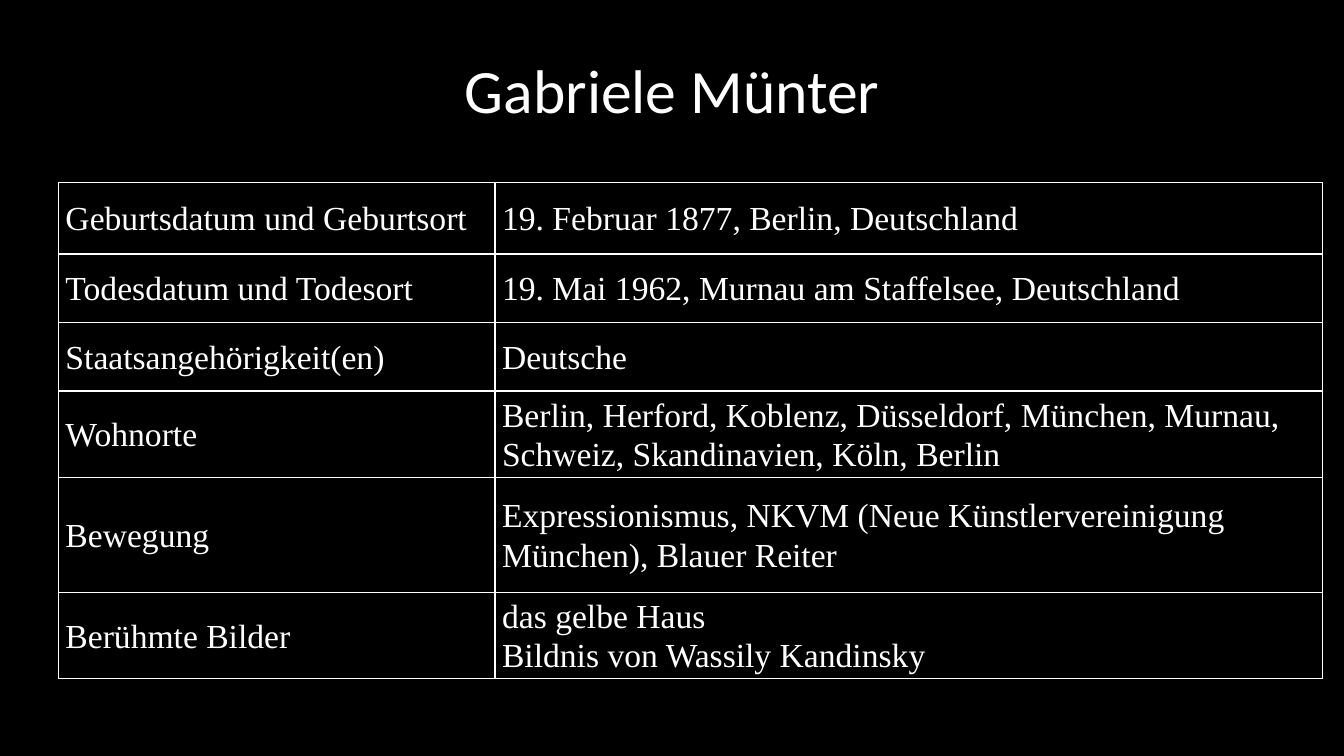
from lxml import etree
from pptx import Presentation
from pptx import util as u
from pptx.dml.color import RGBColor
from pptx.enum import text
from pptx.oxml import ns

BLACK = RGBColor(0, 0, 0)
WHITE = RGBColor(255, 255, 255)
COLUMN_WIDTHS = [4.33, 8.21]
ROW_HEIGHTS = [0.71, 0.68, 0.68, 0.83, 1.14, 0.78]
THICK_RULE = 0
FACTS = [
    ("Geburtsdatum und Geburtsort", "19. Februar 1877, Berlin, Deutschland"),
    ("Todesdatum und Todesort", "19. Mai 1962, Murnau am Staffelsee, Deutschland"),
    ("Staatsangehörigkeit(en)", "Deutsche"),
    ("Wohnorte", "Berlin, Herford, Koblenz, Düsseldorf, München, Murnau, "
                 "Schweiz, Skandinavien, Köln, Berlin"),
    ("Bewegung", "Expressionismus, NKVM (Neue Künstlervereinigung München), Blauer Reiter"),
    ("Berühmte Bilder", "das gelbe Haus\nBildnis von Wassily Kandinsky"),
]


def format_text(frame, font_name, size, spacing, alignment):
    for paragraph in frame.paragraphs:
        paragraph.alignment = alignment
        paragraph.line_spacing = spacing
        for run in paragraph.runs:
            run.font.name = font_name
            run.font.size = u.Pt(size)
            run.font.color.rgb = WHITE


def add_title(slide, left, top, width, height):
    box = slide.shapes.add_textbox(u.Inches(left), u.Inches(top), u.Inches(width), u.Inches(height))
    frame = box.text_frame
    frame.word_wrap = True
    frame.vertical_anchor = text.MSO_ANCHOR.MIDDLE
    frame.text = "Gabriele Münter"
    format_text(frame, "Calibri", 44, 0.9, text.PP_ALIGN.CENTER)


def set_borders(cell, row):
    properties = cell._tc.get_or_add_tcPr()
    widths = {"L": 1, "R": 1,
              "T": 1.5 if row == THICK_RULE + 1 else 1,
              "B": 1.5 if row == THICK_RULE else 1}
    for position, (side, width) in enumerate(widths.items()):
        line = etree.Element(ns.qn(f"a:ln{side}"), w=str(u.Pt(width)))
        fill = etree.SubElement(line, ns.qn("a:solidFill"))
        etree.SubElement(fill, ns.qn("a:srgbClr"), val=str(WHITE))
        properties.insert(position, line)


def fill_cell(cell, content, row):
    cell.fill.solid()
    cell.fill.fore_color.rgb = BLACK
    cell.margin_left = cell.margin_right = u.Inches(0.07)
    cell.margin_top = cell.margin_bottom = 0
    cell.vertical_anchor = text.MSO_ANCHOR.MIDDLE
    cell.text_frame.text = content
    format_text(cell.text_frame, "Times New Roman", 24, 1.07, text.PP_ALIGN.LEFT)
    set_borders(cell, row)


def add_facts_table(slide, left, top):
    frame = slide.shapes.add_table(
        len(FACTS), len(COLUMN_WIDTHS), u.Inches(left), u.Inches(top),
        u.Inches(sum(COLUMN_WIDTHS)), u.Inches(sum(ROW_HEIGHTS)))
    table = frame.table
    table.first_row = False
    table.horz_banding = False
    for column, width in zip(table.columns, COLUMN_WIDTHS):
        column.width = u.Inches(width)
    for row, (height, fact) in enumerate(zip(ROW_HEIGHTS, FACTS)):
        table.rows[row].height = u.Inches(height)
        for column, content in enumerate(fact):
            fill_cell(table.cell(row, column), content, row)


def main():
    presentation = Presentation()
    presentation.slide_width = u.Inches(13.33)
    presentation.slide_height = u.Inches(7.5)
    slide = presentation.slides.add_slide(presentation.slide_layouts[6])
    slide.background.fill.solid()
    slide.background.fill.fore_color.rgb = BLACK
    add_title(slide, 0.92, 0.4, 11.5, 1.06)
    add_facts_table(slide, 0.58, 1.81)
    presentation.save("out.pptx")


if __name__ == "__main__":
    main()
